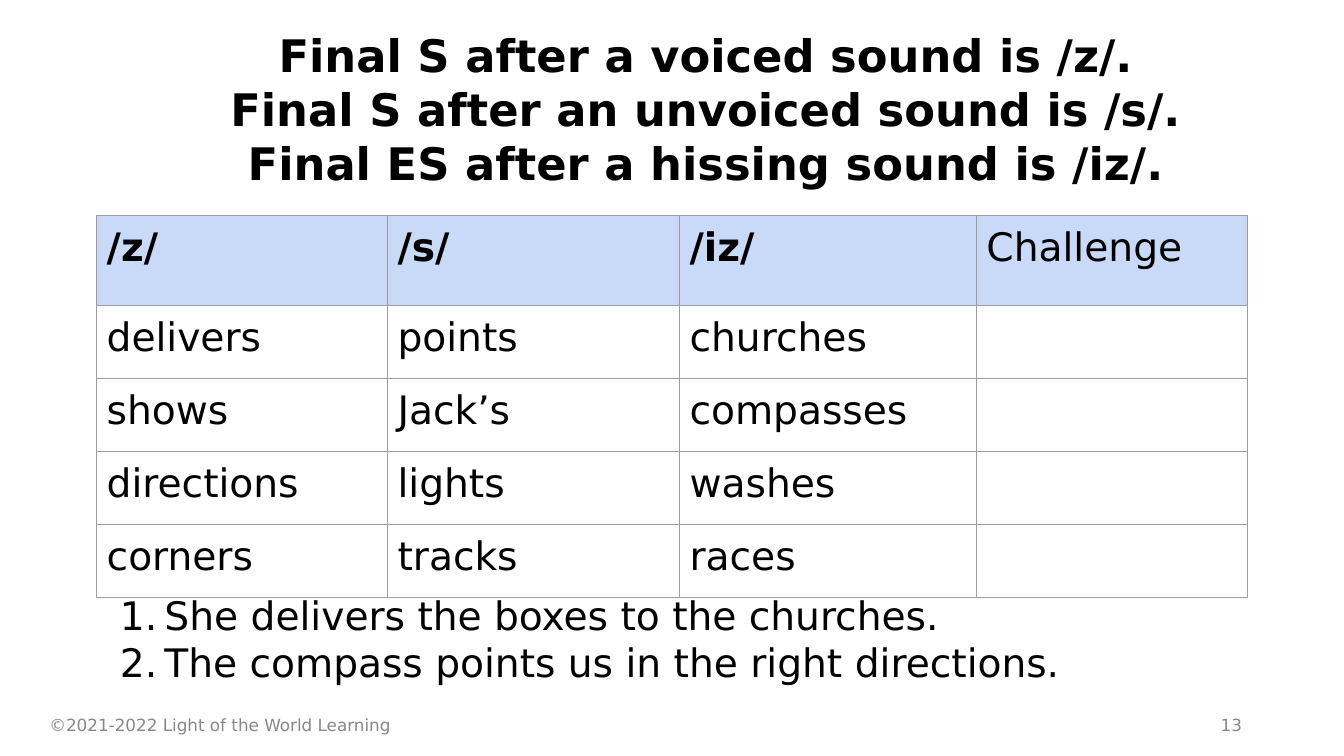
from lxml.etree import SubElement
from pptx import Presentation
from pptx.dml.color import RGBColor
from pptx.enum.text import MSO_ANCHOR, MSO_AUTO_SIZE, PP_ALIGN
from pptx.oxml.ns import qn
from pptx.util import Cm, Pt

FONT = "DejaVu Sans"
COLORS = {"text": "000000", "footer": "888888", "header": "C9DAF8", "border": "9E9E9E"}


def style(para, size, color, bold=False, align=PP_ALIGN.LEFT):
    para.alignment = align
    para.space_before = Pt(0)
    font = para.font
    font.name, font.size, font.bold = FONT, Pt(size), bold
    font.color.rgb = RGBColor.from_string(COLORS[color])


def place(shape, left, top, width, height, anchor):
    shape.left, shape.top = Cm(left), Cm(top)
    shape.width, shape.height = Cm(width), Cm(height)
    frame = shape.text_frame
    frame.word_wrap = True
    frame.auto_size = MSO_AUTO_SIZE.NONE
    frame.vertical_anchor = anchor
    return frame


deck = Presentation()
deck.slide_width, deck.slide_height = Cm(33.87), Cm(19.05)
page = deck.slides.add_slide(deck.slide_layouts[1])

# Title with the three pronunciation rules
title = place(page.shapes.title, 4.04, 0.58, 27.51, 2.13, MSO_ANCHOR.TOP)
title.text = "\n".join([
    "Final S after a voiced sound is /z/.",
    "Final S after an unvoiced sound is /s/.",
    "Final ES after a hissing sound is /iz/.",
])
for para in title.paragraphs:
    style(para, 32, "text", True, PP_ALIGN.CENTER)

# Word table
words = [
    ["/z/", "/s/", "/iz/", "Challenge"],
    ["delivers", "points", "churches", ""],
    ["shows", "Jack’s", "compasses", ""],
    ["directions", "lights", "washes", ""],
    ["corners", "tracks", "races", ""],
]
column_widths = [7.33, 7.36, 7.48, 6.83]
row_heights = [2.28] + [1.84] * 4
table = page.shapes.add_table(
    len(words), len(column_widths), Cm(2.44), Cm(5.42),
    Cm(sum(column_widths)), Cm(sum(row_heights))).table
table.horz_banding = False
table.first_row = False
for column, width in zip(table.columns, column_widths):
    column.width = Cm(width)
for row, height in zip(table.rows, row_heights):
    row.height = Cm(height)

for row_index, row_words in enumerate(words):
    for column_index, word in enumerate(row_words):
        cell = table.cell(row_index, column_index)
        cell.text = word
        cell.margin_left = cell.margin_right = Cm(0.25)
        cell.margin_top = cell.margin_bottom = Cm(0.25)
        style(cell.text_frame.paragraphs[0], 28, "text", word.startswith("/"))
        properties = cell._tc.get_or_add_tcPr()
        for side in ("lnL", "lnR", "lnT", "lnB"):
            line = SubElement(properties, qn(f"a:{side}"), w=str(Pt(0.75)))
            fill = SubElement(line, qn("a:solidFill"))
            SubElement(fill, qn("a:srgbClr"), val=COLORS["border"])
        if row_index == 0:
            cell.fill.solid()
            cell.fill.fore_color.rgb = RGBColor.from_string(COLORS["header"])
        else:
            cell.fill.background()

# Numbered practice sentences
sentences = place(page.placeholders[1], 2.62, 14.66, 28.63, 4.11, MSO_ANCHOR.TOP)
sentences.margin_top = sentences.margin_bottom = Cm(0.25)
sentences.text = "\n".join([
    "She delivers the boxes to the churches.",
    "The compass points us in the right directions.",
])
for para in sentences.paragraphs:
    properties = para._p.get_or_add_pPr()
    properties.set("marL", str(Cm(1.27)))
    properties.set("indent", str(Cm(-1.12)))
    bullet_color = SubElement(properties, qn("a:buClr"))
    SubElement(bullet_color, qn("a:srgbClr"), val=COLORS["text"])
    SubElement(properties, qn("a:buFont"), typeface=FONT)
    SubElement(properties, qn("a:buAutoNum"), type="arabicPeriod")
    style(para, 28, "text")

# Footer
for text, left, width, align in [
    ("©2021-2022 Light of the World Learning", 0, 11.1, PP_ALIGN.CENTER),
    ("13", 23.93, 7.62, PP_ALIGN.RIGHT),
]:
    box = page.shapes.add_textbox(0, 0, 0, 0)
    frame = place(box, left, 17.75, width, 1.02, MSO_ANCHOR.MIDDLE)
    frame.text = text
    style(frame.paragraphs[0], 12, "footer", align=align)

deck.save("out.pptx")
